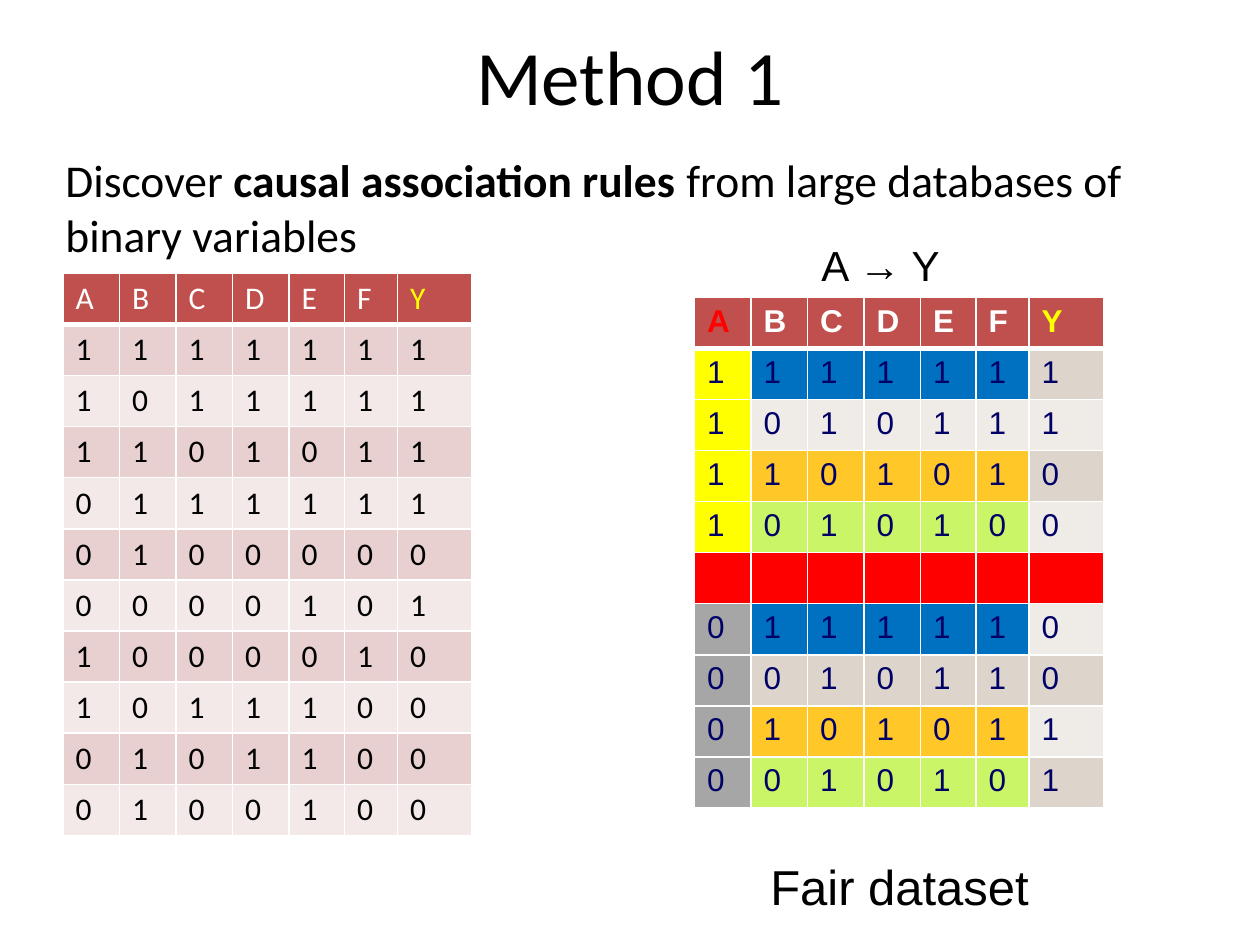
"""Build the Method 1 slide with its source table and its fair dataset table."""
import lxml.etree
import pptx
import pptx.dml.color
import pptx.enum.text
import pptx.oxml.ns
import pptx.util

Cm = pptx.util.Cm
Align = pptx.enum.text.PP_ALIGN
Size = pptx.enum.text.MSO_AUTO_SIZE
Anchor = pptx.enum.text.MSO_ANCHOR
qn = pptx.oxml.ns.qn


def paint(fill, tone):
    fill.solid()
    fill.fore_color.rgb = pptx.dml.color.RGBColor.from_string(tone)


def write(para, text, tone, form):
    run = para.add_run()
    run.text = text
    for key, val in form.items():
        setattr(run.font, key, val)
    paint(run.font.fill, tone)


deck = pptx.Presentation()
deck.slide_width, deck.slide_height = Cm(25.4), Cm(19.05)
slide = deck.slides.add_slide(deck.slide_layouts[6])

fit = {"word_wrap": True, "auto_size": Size.SHAPE_TO_FIT_TEXT}
fixed = {"word_wrap": True, "auto_size": Size.NONE, "vertical_anchor": Anchor.MIDDLE}
texts = [
    ((1.27, 0.08, 22.86, 2.87), fixed, Align.CENTER, "Calibri", 44, [("Method 1", False)]),
    ((1.07, 2.95, 24.33, 2.49), fit, Align.LEFT, "Calibri", 26, [
        ("Discover ", False),
        ("causal association rules ", True),
        ("from large databases of binary variables", False),
    ]),
    ((16.31, 4.7, 4.65, 1.3), fit, Align.LEFT, "Arial", 24, [("A → Y", False)]),
    ((13.79, 17.15, 8.69, 1.45), fit, Align.CENTER, "Arial", 28, [("Fair dataset", False)]),
]
for place, frame, align, face, size, runs in texts:
    box = slide.shapes.add_textbox(*map(Cm, place)).text_frame
    for key, val in frame.items():
        setattr(box, key, val)
    para = box.paragraphs[0]
    para.alignment = align
    for text, bold in runs:
        write(para, text, "000000", {"name": face, "size": pptx.util.Pt(size), "bold": bold})

widths = [1.14, 1.14, 1.14, 1.14, 1.12, 1.07, 1.5]
high = 1.03
grids = [
    {
        "left": 1.27, "top": 5.51, "face": "Calibri", "bold": False, "ink": "000000",
        "bands": ["F4E9E9", "E8D0D0"], "heads": {"Y": "FFFF00"},
        "rows": ["ABCDEFY", "1111111", "1011111", "1101011", "0111111", "0100000",
                 "0000101", "1000010", "1011100", "0101100", "0100100"],
    },
    {
        "left": 14, "top": 5.99, "face": "Arial", "bold": True, "ink": "000066",
        "bands": ["EFEBE7", "DDD5CB"], "heads": {"A": "FF0000", "Y": "FFFF00"},
        "rows": ["ABCDEFY", "1111111", "1010111", "1101010", "1010100", " " * 7,
                 "0111110", "0010110", "0101011", "0010101"],
    },
]
for grid in grids:
    rows = grid["rows"]
    place = (grid["left"], grid["top"], sum(widths), high * len(rows))
    table = slide.shapes.add_table(len(rows), len(widths), *map(Cm, place)).table
    for col, width in zip(table.columns, widths):
        col.width = Cm(width)
    for y, row in enumerate(rows):
        table.rows[y].height = Cm(high)
        for x, mark in enumerate(row):
            cell = table.cell(y, x)
            props = cell._tc.get_or_add_tcPr()
            thick = {0: "lnB", 1: "lnT"}.get(y)
            for side in ("lnL", "lnR", "lnT", "lnB"):
                line = lxml.etree.SubElement(props, qn("a:" + side))
                line.set("w", str(pptx.util.Pt(3 if side == thick else 1)))
                solid = lxml.etree.SubElement(line, qn("a:solidFill"))
                lxml.etree.SubElement(solid, qn("a:srgbClr")).set("val", "FFFFFF")
            paint(cell.fill, grid["bands"][y % 2] if y else "C0504D")
            tone = grid["ink"] if y else grid["heads"].get(mark, "FFFFFF")
            form = {"name": grid["face"], "size": pptx.util.Pt(18), "bold": grid["bold"] and y == 0}
            if mark.strip():
                write(cell.text_frame.paragraphs[0], mark, tone, form)

pairs = {1: "0070C0", 3: "FFC727", 4: "C9F567", 6: "0070C0", 8: "FFC727", 9: "C9F567"}
for y in range(1, len(rows)):
    if y == 5:
        tones = ["FF0000"] * 7
    else:
        tones = ["FFFF00" if y < 5 else "A6A6A6"] + [pairs.get(y)] * 5
    for x, tone in enumerate(tones):
        if tone:
            paint(table.cell(y, x).fill, tone)

deck.save("out.pptx")
